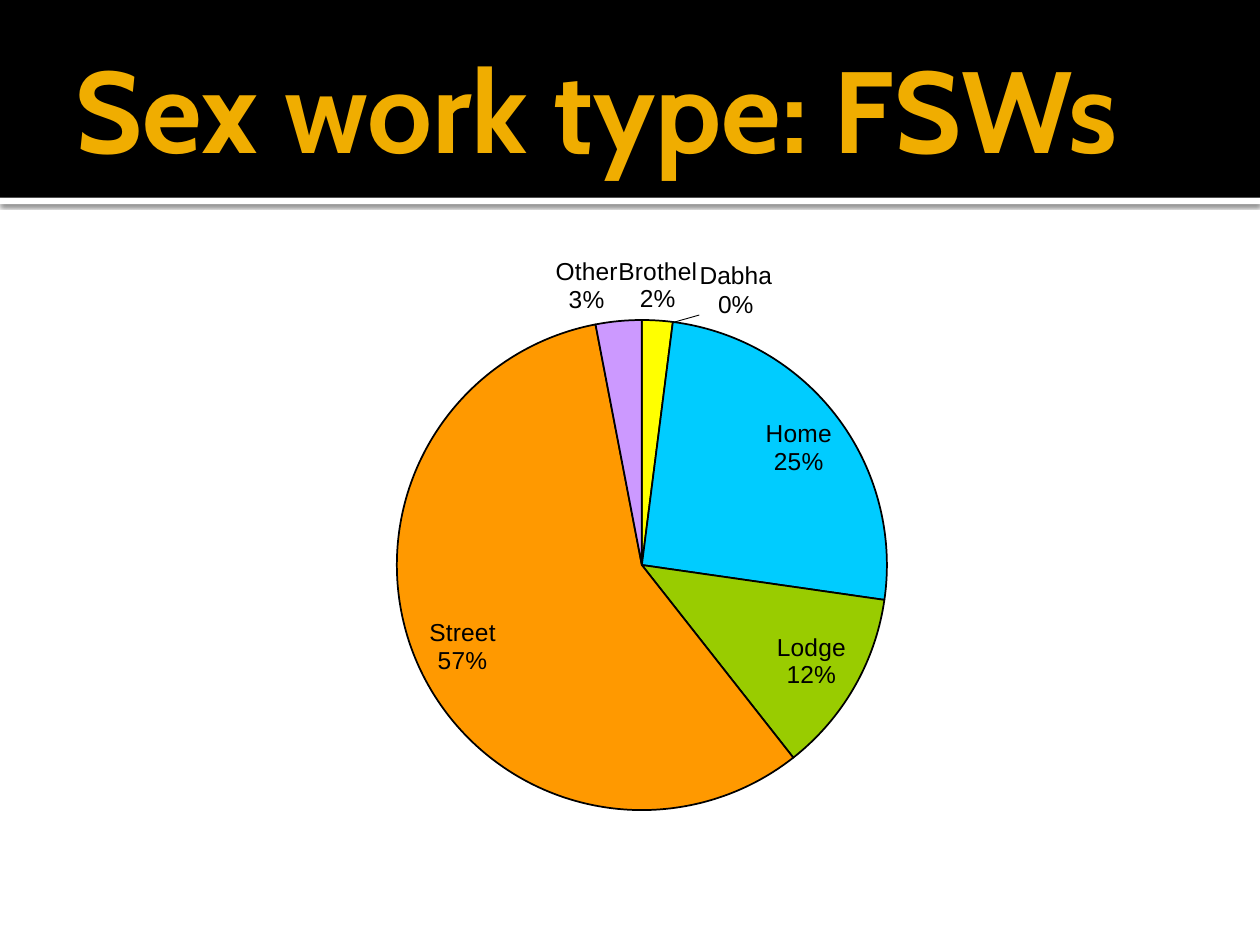
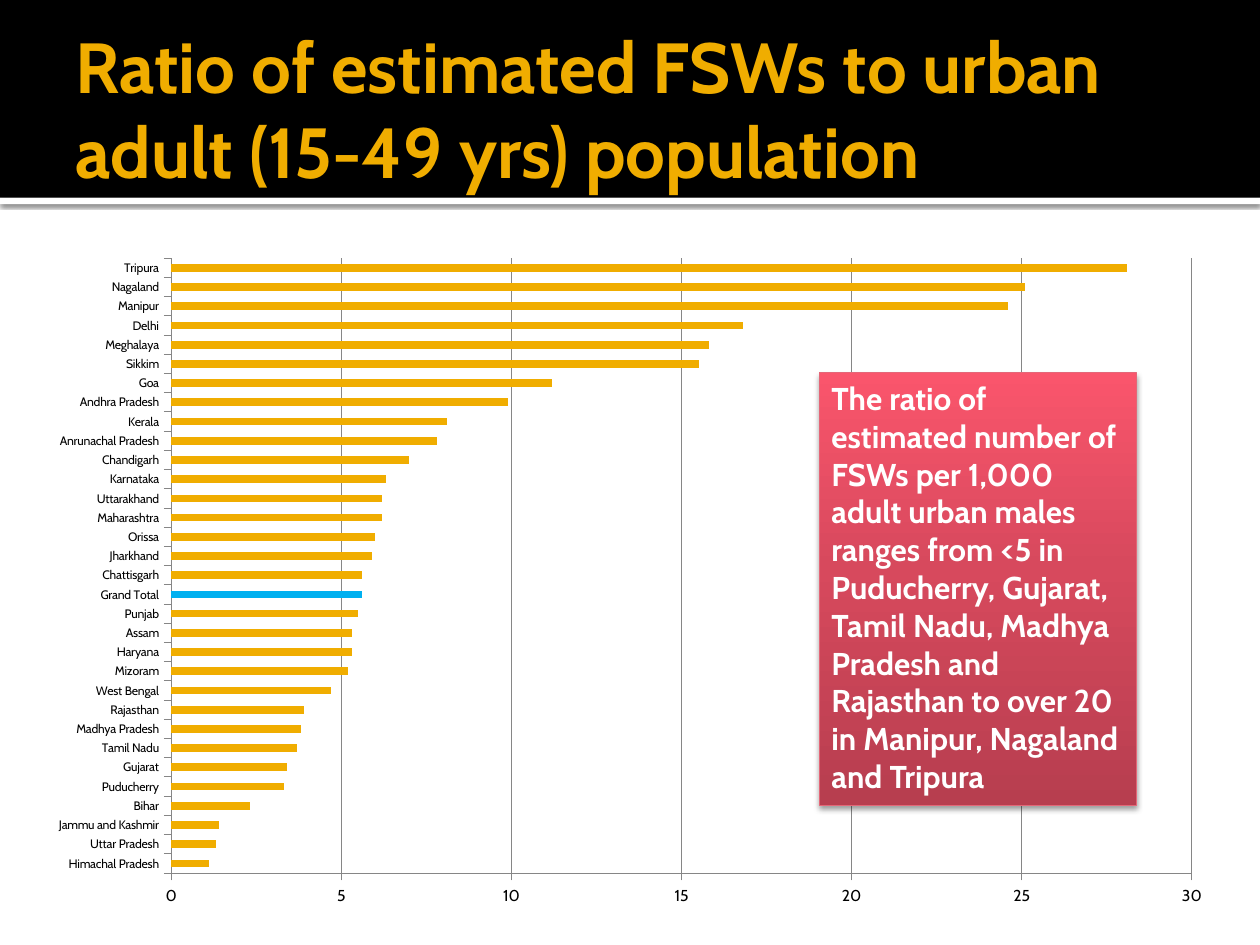
import pptx
import pptx.chart.data
import pptx.dml.color
import pptx.enum.chart
import pptx.enum.shapes
import pptx.enum.text
import pptx.oxml
import pptx.oxml.ns
import pptx.util
from lxml import etree

Inches = pptx.util.Inches
Pt = pptx.util.Pt
qn = pptx.oxml.ns.qn

# Content
PIE_TITLE = "Sex work type: FSWs"
WORK_TYPES = [  # name, percent, colour
    ("Brothel", 2, "yellow"),
    ("Dabha", 0, "plum"),
    ("Home", 25, "sky"),
    ("Lodge", 12, "green"),
    ("Street", 57, "orange"),
    ("Other", 3, "lilac"),
]
EMPTY_SLICE = 1

RATIO_TITLE = "Ratio of estimated FSWs to urban adult (15-49 yrs) population"
STATE_RATIOS = [
    ("Himachal Pradesh", 1.1), ("Uttar Pradesh", 1.3), ("Jammu and Kashmir", 1.4),
    ("Bihar", 2.3), ("Puducherry", 3.3), ("Gujarat", 3.4), ("Tamil Nadu", 3.7),
    ("Madhya Pradesh", 3.8), ("Rajasthan", 3.9), ("West Bengal", 4.7),
    ("Mizoram", 5.2), ("Haryana", 5.3), ("Assam", 5.3), ("Punjab", 5.5),
    ("Grand Total", 5.6), ("Chattisgarh", 5.6), ("Jharkhand", 5.9), ("Orissa", 6),
    ("Maharashtra", 6.2), ("Uttarakhand", 6.2), ("Karnataka", 6.3),
    ("Chandigarh", 7), ("Anrunachal Pradesh", 7.8), ("Kerala", 8.1),
    ("Andhra Pradesh", 9.9), ("Goa", 11.2), ("Sikkim", 15.5), ("Meghalaya", 15.8),
    ("Delhi", 16.8), ("Manipur", 24.6), ("Nagaland", 25.1), ("Tripura", 28.1),
]
HIGHLIGHTED_STATE = "Grand Total"
CALLOUT = (
    "The ratio of estimated number of FSWs per 1,000 adult urban males ranges "
    "from <5 in Puducherry, Gujarat, Tamil Nadu, Madhya Pradesh and Rajasthan "
    "to over 20 in Manipur, Nagaland and Tripura"
)

# Shared style
COLORS = {
    "black": "000000", "white": "FFFFFF", "gold": "F0AD00", "blue": "00B0F0",
    "grey": "868686", "yellow": "FFFF00", "plum": "993366", "sky": "00CCFF",
    "green": "99CC00", "orange": "FF9900", "lilac": "CC99FF", "rose": "E46778",
}
CALLOUT_GRADIENT = [(0, "B73E4F"), (55, "D7495D"), (100, "FA556C")]
TITLE_FONT = "Cabin"
PIE_FONT = "Arial"
PIE_LABEL_SIZE = 14
BAND_HEIGHT = 1.57

# Chart frames and their plot areas, in slide inches
PIE_FRAME, PIE_PLOT = (1.31, 1.59, 7.56, 5.76), (3.15, 2.54, 3.89, 3.89)
BAR_FRAME, BAR_PLOT = (0.28, 1.94, 9.45, 5.35), (1.36, 2.05, 8.1, 4.88)


def rgb(name):
    return pptx.dml.color.RGBColor.from_string(COLORS[name])


def box(*lengths):
    return [Inches(length) for length in lengths]


def style_font(font, name, size, color, bold=False):
    font.name = name
    font.size = Pt(size)
    font.bold = bold
    font.color.rgb = rgb(color)


def set_margins(frame, *margins):
    frame.margin_left, frame.margin_top, frame.margin_right, frame.margin_bottom = box(
        *margins)


def add_shadow(shape, opacity, blur, distance):
    """Black shadow cast straight down."""
    shape.shadow.inherit = False
    effects = shape.element.spPr.find(qn("a:effectLst"))
    shadow = etree.SubElement(
        effects, qn("a:outerShdw"), blurRad=str(Pt(blur)), dist=str(Pt(distance)),
        dir="5400000", algn="tl", rotWithShape="0")
    color = etree.SubElement(shadow, qn("a:srgbClr"), val=COLORS["black"])
    etree.SubElement(color, qn("a:alpha"), val=str(opacity * 1000))


def add_rectangle(slide, *lengths):
    rectangle = slide.shapes.add_shape(
        pptx.enum.shapes.MSO_SHAPE.RECTANGLE, *box(*lengths))
    rectangle.shadow.inherit = False
    return rectangle


def add_layout_bands(layout, slide):
    """Draw the title band and its rule once, then hand them to the layout."""
    bands = [("white", BAND_HEIGHT, 0.05), ("black", 0, BAND_HEIGHT)]
    for position, (color, top, height) in enumerate(bands):
        band = add_rectangle(slide, 0, top, 10, height)
        band.fill.solid()
        band.fill.fore_color.rgb = rgb(color)
        band.line.fill.background()
        if color == "white":
            add_shadow(band, 60, 2.5, 0.8)
        layout.shapes.element.insert(2 + position, band.element)


def set_title(slide, text, size):
    title = slide.shapes.title
    title.left, title.top, title.width, title.height = box(0.5, 0.17, 9, 1.37)
    frame = title.text_frame
    frame.word_wrap = True
    frame.auto_size = pptx.enum.text.MSO_AUTO_SIZE.NONE
    frame.vertical_anchor = pptx.enum.text.MSO_ANCHOR.MIDDLE
    set_margins(frame, 0.1, 0.05, 0.05, 0.05)
    paragraph = frame.paragraphs[0]
    paragraph.alignment = pptx.enum.text.PP_ALIGN.LEFT
    run = paragraph.add_run()
    run.text = text
    style_font(run.font, TITLE_FONT, size, "gold", bold=True)


def add_chart(slide, kind, rows, frame, plot, font_name, font_size):
    data = pptx.chart.data.CategoryChartData()
    data.categories = [row[0] for row in rows]
    data.add_series("Series 1", [row[1] for row in rows])
    chart = slide.shapes.add_chart(kind, *box(*frame), data).chart
    chart.has_legend = False
    chart.has_title = False
    style_font(chart.font, font_name, font_size, "black")
    place_plot(chart, frame, plot)
    return chart


def place_plot(chart, frame, plot):
    """Fix the plot area as fractions of the chart frame."""
    left, top, width, height = frame
    settings = {
        "layoutTarget": "inner", "xMode": "edge", "yMode": "edge",
        "x": (plot[0] - left) / width, "y": (plot[1] - top) / height,
        "w": plot[2] / width, "h": plot[3] / height,
    }
    plot_area = chart.element.find(".//" + qn("c:plotArea"))
    for old_layout in plot_area.findall(qn("c:layout")):
        plot_area.remove(old_layout)
    layout = etree.Element(qn("c:layout"))
    manual = etree.SubElement(layout, qn("c:manualLayout"))
    for name, value in settings.items():
        etree.SubElement(manual, qn("c:" + name), val=str(value))
    plot_area.insert(0, layout)


def add_work_type_pie(slide):
    chart = add_chart(slide, pptx.enum.chart.XL_CHART_TYPE.PIE, WORK_TYPES,
                      PIE_FRAME, PIE_PLOT, PIE_FONT, 8.2)
    chart.plots[0].vary_by_categories = True
    series = chart.plots[0].series[0]
    for index, (_, _, color) in enumerate(WORK_TYPES):
        point_format = series.points[index].format
        point_format.fill.solid()
        point_format.fill.fore_color.rgb = rgb(color)
        point_format.line.color.rgb = rgb("black")
        point_format.line.width = Pt(1)

    # Category over percentage; the values are already percentages
    labels = series.data_labels
    labels.show_category_name = True
    labels.show_value = True
    labels.show_percentage = False
    labels.number_format = '0"%"'
    labels.number_format_is_linked = False
    labels.position = pptx.enum.chart.XL_LABEL_POSITION.BEST_FIT
    style_font(labels.font, PIE_FONT, PIE_LABEL_SIZE, "black")
    group = chart.element.find(".//" + qn("c:ser")).find(qn("c:dLbls"))
    separator = etree.Element(qn("c:separator"))
    separator.text = "\n"
    last_switch = group.find(qn("c:showBubbleSize"))
    if last_switch is None:
        last_switch = group.find(qn("c:showPercent"))
    last_switch.addnext(separator)

    # The empty slice is labelled beside the pie instead
    no_label = etree.Element(qn("c:dLbl"))
    etree.SubElement(no_label, qn("c:idx"), val=str(EMPTY_SLICE))
    etree.SubElement(no_label, qn("c:delete"), val="1")
    group.insert(0, no_label)


def add_empty_slice_label(slide):
    name, percent, _ = WORK_TYPES[EMPTY_SLICE]
    label = slide.shapes.add_textbox(*box(5.49, 2.06, 0.7, 0.45))
    frame = label.text_frame
    frame.word_wrap = True
    set_margins(frame, 0, 0, 0, 0)
    for index, text in enumerate([name, f"{percent}%"]):
        paragraph = frame.add_paragraph() if index else frame.paragraphs[0]
        paragraph.alignment = pptx.enum.text.PP_ALIGN.CENTER
        run = paragraph.add_run()
        run.text = text
        style_font(run.font, PIE_FONT, PIE_LABEL_SIZE, "black")

    leader = slide.shapes.add_connector(
        pptx.enum.shapes.MSO_CONNECTOR.STRAIGHT, *box(5.34, 2.56, 5.55, 2.5))
    leader.line.color.rgb = rgb("black")
    leader.line.width = Pt(0.5)
    etree.SubElement(leader.element.spPr, qn("a:effectLst"))


def add_ratio_bars(slide):
    chart = add_chart(slide, pptx.enum.chart.XL_CHART_TYPE.BAR_CLUSTERED, STATE_RATIOS,
                      BAR_FRAME, BAR_PLOT, TITLE_FONT, 18)
    plot = chart.plots[0]
    plot.gap_width = 150
    plot.vary_by_categories = False
    series = plot.series[0]
    highlighted = [row[0] for row in STATE_RATIOS].index(HIGHLIGHTED_STATE)
    for target, color in [(series, "gold"), (series.points[highlighted], "blue")]:
        target.format.fill.solid()
        target.format.fill.fore_color.rgb = rgb(color)

    category_axis, value_axis = chart.category_axis, chart.value_axis
    category_axis.has_major_gridlines = False
    value_axis.has_major_gridlines = True
    value_axis.minimum_scale = 0
    value_axis.maximum_scale = 30
    value_axis.major_unit = 5
    value_axis.tick_labels.number_format = "0"
    value_axis.tick_labels.number_format_is_linked = False
    for axis, size in [(category_axis, 7), (value_axis, 9)]:
        style_font(axis.tick_labels.font, TITLE_FONT, size, "black")
        axis.major_tick_mark = pptx.enum.chart.XL_TICK_MARK.OUTSIDE
    for lined in (category_axis, value_axis, value_axis.major_gridlines):
        lined.format.line.color.rgb = rgb("grey")
        lined.format.line.width = Pt(0.5)


def add_callout(slide):
    callout = add_rectangle(slide, 6.5, 2.96, 2.52, 3.43)
    callout.fill.gradient()
    callout.fill.gradient_angle = 90
    stops = callout.element.spPr.find(".//" + qn("a:gsLst"))
    for stop in list(stops):
        stops.remove(stop)
    for percent, color in CALLOUT_GRADIENT:
        stop = etree.SubElement(stops, qn("a:gs"), pos=str(percent * 1000))
        etree.SubElement(stop, qn("a:srgbClr"), val=color)
    callout.line.color.rgb = rgb("rose")
    callout.line.width = Pt(0.5)
    add_shadow(callout, 38, 3.1, 2)

    frame = callout.text_frame
    frame.word_wrap = True
    frame.auto_size = pptx.enum.text.MSO_AUTO_SIZE.SHAPE_TO_FIT_TEXT
    frame.vertical_anchor = pptx.enum.text.MSO_ANCHOR.TOP
    paragraph = frame.paragraphs[0]
    paragraph.alignment = pptx.enum.text.PP_ALIGN.LEFT
    run = paragraph.add_run()
    run.text = CALLOUT
    style_font(run.font, TITLE_FONT, 18, "white", bold=True)


def main():
    presentation = pptx.Presentation()
    presentation.slide_width, presentation.slide_height = box(10, 7.5)
    layout = presentation.slide_layouts[5]

    # Work types
    pie_slide = presentation.slides.add_slide(layout)
    add_layout_bands(layout, pie_slide)
    set_title(pie_slide, PIE_TITLE, 66)
    add_work_type_pie(pie_slide)
    add_empty_slice_label(pie_slide)

    # Ratio by state
    ratio_slide = presentation.slides.add_slide(layout)
    set_title(ratio_slide, RATIO_TITLE, 40.5)
    add_ratio_bars(ratio_slide)
    add_callout(ratio_slide)

    presentation.save("out.pptx")


if __name__ == "__main__":
    main()
